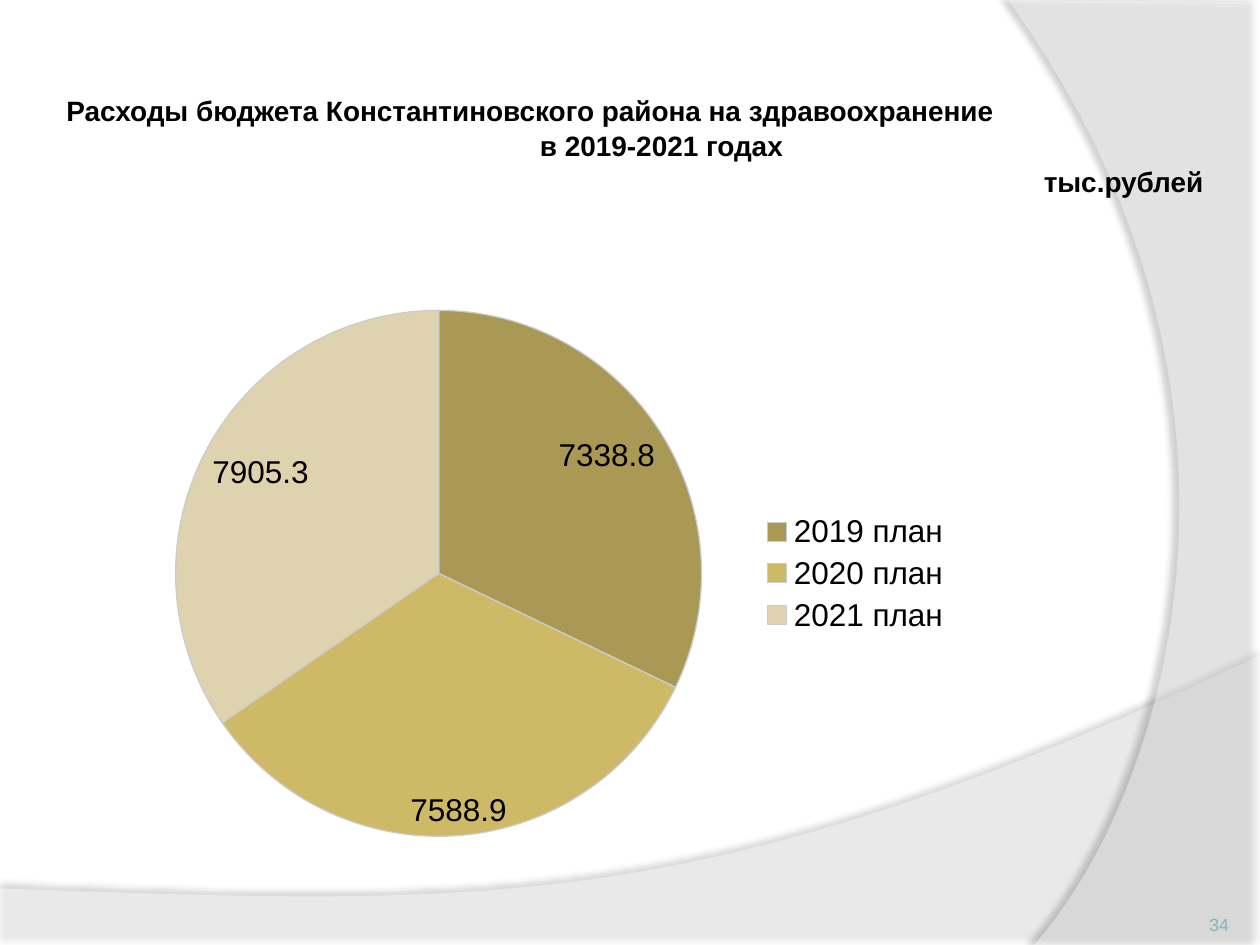
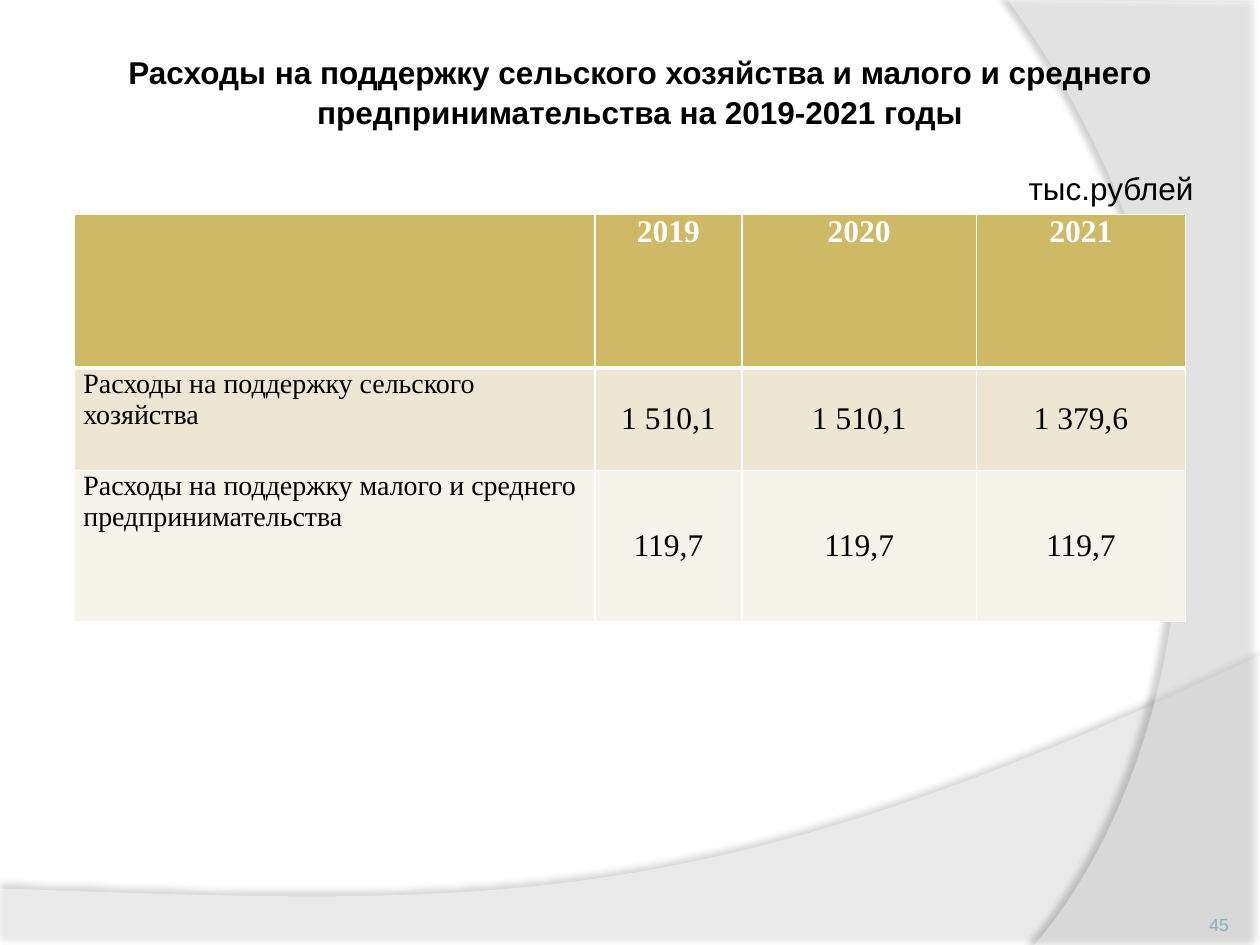
from pptx import Presentation
from pptx.chart.data import CategoryChartData
from pptx.dml.color import RGBColor
from pptx.enum.chart import XL_CHART_TYPE, XL_LABEL_POSITION, XL_LEGEND_POSITION
from pptx.enum.text import MSO_ANCHOR, PP_ALIGN
from pptx.oxml import parse_xml
from pptx.oxml.ns import nsdecls
from pptx.util import Cm, Pt

BLACK = RGBColor(0x00, 0x00, 0x00)
WHITE = RGBColor(0xFF, 0xFF, 0xFF)
GOLD = RGBColor(0xCE, 0xB9, 0x66)
DARK_GOLD = RGBColor(0xA9, 0x99, 0x55)
PALE_GOLD = RGBColor(0xDF, 0xD3, 0xAF)
SAND = RGBColor(0xED, 0xE6, 0xD3)
IVORY = RGBColor(0xF6, 0xF3, 0xEA)
SLICE_EDGE = RGBColor(0xCC, 0xCC, 0xCC)
TEAL = RGBColor(0x83, 0xB3, 0xBB)

SANS = "Arial"
SERIF = "Times New Roman"
CURVE_STEPS = 40


def curve_points(start, control_1, control_2, end):
    """Points along a cubic Bezier curve, including both ends."""
    points = []
    for step in range(CURVE_STEPS + 1):
        t = step / CURVE_STEPS
        weights = ((1 - t) ** 3, 3 * t * (1 - t) ** 2, 3 * t * t * (1 - t), t ** 3)
        corners = (start, control_1, control_2, end)
        points.append(tuple(
            sum(weight * corner[axis] for weight, corner in zip(weights, corners))
            for axis in (0, 1)))
    return points


class BudgetDeck:
    def __init__(self):
        self.deck = Presentation()
        self.deck.slide_width = Cm(25.4)
        self.deck.slide_height = Cm(19.05)
        self.page = None

    def add_page(self):
        self.page = self.deck.slides.add_slide(self.deck.slide_layouts[6])
        self.add_band(
            [(0, 19.08), (25.4, 19.08)],
            [(25.4, 13.21), (14.2, 18.52), (9.93, 18.26), (0, 17.91)],
            opacity=45, shadow_opacity=35, distance=3.5, direction=270)
        self.add_band(
            [(25.4, 0.05), (25.4, 19.05)],
            [(20.85, 19.05), (23.75, 15.72), (25.86, 7.62), (20.32, 0)],
            opacity=40, shadow_opacity=45, distance=4, direction=180)

    def add_band(self, corners, curve, opacity, shadow_opacity, distance, direction):
        """Translucent white area with one curved edge and a soft shadow."""
        outline = [(Cm(x), Cm(y)) for x, y in corners + curve_points(*curve)]
        builder = self.page.shapes.build_freeform(*outline[0])
        builder.add_line_segments(outline[1:], close=True)
        band = builder.convert_to_shape()
        band.fill.solid()
        band.fill.fore_color.rgb = WHITE
        band.line.fill.background()
        band.shadow.inherit = False
        properties = band.element.spPr
        properties.xpath("./a:solidFill/a:srgbClr")[0].append(parse_xml(
            f'<a:alpha {nsdecls("a")} val="{opacity * 1000}"/>'))
        properties.xpath("./a:effectLst")[0].append(parse_xml(
            f'<a:outerShdw {nsdecls("a")} blurRad="{Pt(4)}" dist="{Pt(distance)}" '
            f'dir="{direction * 60000}" algn="ctr" rotWithShape="0">'
            f'<a:srgbClr val="{BLACK}"><a:alpha val="{shadow_opacity * 1000}"/>'
            '</a:srgbClr></a:outerShdw>'))

    def style_font(self, font, size, color=BLACK, bold=False, name=SANS):
        font.name = name
        font.size = Pt(size)
        font.bold = bold
        font.color.rgb = color

    def add_text(self, left, top, width, height, lines, size, color=BLACK):
        """Each line is (text, alignment, bold)."""
        box = self.page.shapes.add_textbox(Cm(left), Cm(top), Cm(width), Cm(height))
        frame = box.text_frame
        frame.word_wrap = True
        frame.text = "\n".join(text for text, _, _ in lines)
        for paragraph, (_, alignment, bold) in zip(frame.paragraphs, lines):
            paragraph.alignment = alignment
            paragraph.line_spacing = 1.05
            for span in paragraph.runs:
                self.style_font(span.font, size, color, bold)
        return frame

    def add_page_number(self, number):
        frame = self.add_text(22.66, 17.83, 2.11, 1.02,
                              [(number, PP_ALIGN.RIGHT, False)], 10, TEAL)
        frame.vertical_anchor = MSO_ANCHOR.BOTTOM
        frame.margin_left = frame.margin_right = 0
        frame.margin_top = frame.margin_bottom = 0

    def add_pie(self, left, top, width, height, amounts, colors):
        data = CategoryChartData()
        data.categories = list(amounts)
        data.add_series("Series 1", list(amounts.values()))
        chart = self.page.shapes.add_chart(
            XL_CHART_TYPE.PIE, Cm(left), Cm(top), Cm(width), Cm(height), data).chart
        chart.has_title = False
        self.style_font(chart.font, 18)
        chart.has_legend = True
        chart.legend.position = XL_LEGEND_POSITION.RIGHT
        chart.legend.include_in_layout = False
        self.style_font(chart.legend.font, 18)

        plot = chart.plots[0]
        plot.vary_by_categories = True
        plot.has_data_labels = True
        labels = plot.data_labels
        labels.show_value = True
        labels.show_percentage = False
        labels.position = XL_LABEL_POSITION.INSIDE_END
        self.style_font(labels.font, 18)
        for index, color in enumerate(colors):
            slice_format = plot.series[0].points[index].format
            slice_format.fill.solid()
            slice_format.fill.fore_color.rgb = color
            slice_format.line.color.rgb = SLICE_EDGE
            slice_format.line.width = Pt(0.75)

        plot_area = chart.element.xpath(".//c:plotArea")[0]
        for old_layout in plot_area.xpath("./c:layout"):
            plot_area.remove(old_layout)
        plot_area.insert(0, parse_xml(
            f'<c:layout {nsdecls("c")}><c:manualLayout><c:layoutTarget val="inner"/>'
            '<c:xMode val="edge"/><c:yMode val="edge"/><c:x val="0.06"/><c:y val="0.03"/>'
            '<c:w val="0.63"/><c:h val="0.94"/></c:manualLayout></c:layout>'))

    def add_borders(self, cell, top, bottom):
        properties = cell._tc.get_or_add_tcPr()
        for side, width in (("L", 1), ("R", 1), ("T", top), ("B", bottom)):
            properties.append(parse_xml(
                f'<a:ln{side} {nsdecls("a")} w="{Pt(width)}"><a:solidFill>'
                f'<a:srgbClr val="{WHITE}"/></a:solidFill></a:ln{side}>'))

    def add_table(self, left, top, widths, heights, rows, fills):
        """The first row is the header and the first column holds row names."""
        table = self.page.shapes.add_table(
            len(rows), len(widths), Cm(left), Cm(top),
            Cm(sum(widths)), Cm(sum(heights))).table
        for column, width in zip(table.columns, widths):
            column.width = Cm(width)
        for row_index, (row, height) in enumerate(zip(rows, heights)):
            table.rows[row_index].height = Cm(height)
            is_header = row_index == 0
            for column_index, text in enumerate(row):
                is_name = column_index == 0
                cell = table.cell(row_index, column_index)
                self.add_borders(cell, top=3 if row_index == 1 else 1,
                                 bottom=3 if is_header else 1)
                cell.fill.solid()
                cell.fill.fore_color.rgb = fills[row_index]
                cell.margin_left = cell.margin_right = Cm(0.18)
                cell.margin_top = cell.margin_bottom = 0
                if not (is_header or is_name):
                    cell.vertical_anchor = MSO_ANCHOR.MIDDLE
                cell.text_frame.text = text
                paragraph = cell.text_frame.paragraphs[0]
                paragraph.alignment = PP_ALIGN.LEFT if is_name else PP_ALIGN.CENTER
                for span in paragraph.runs:
                    self.style_font(span.font, 16 if is_name else 18,
                                    WHITE if is_header else BLACK, is_header, SERIF)


def add_health_page(budget):
    budget.add_page()
    title = budget.add_text(1.09, 1.73, 23.42, 2.31, [
        ("Расходы бюджета Константиновского района на здравоохранение",
         PP_ALIGN.LEFT, True),
        ("в 2019-2021 годах", PP_ALIGN.CENTER, True),
        ("тыс.рублей", PP_ALIGN.RIGHT, True)], 16)
    title.paragraphs[1]._p.get_or_add_pPr().set("marL", str(Cm(1.07)))
    budget.add_pie(2.49, 5.92, 16.94, 11.28,
                   {"2019 план": 7338.8, "2020 план": 7588.9, "2021 план": 7905.3},
                   (DARK_GOLD, GOLD, PALE_GOLD))
    budget.add_page_number("34")


def add_support_page(budget):
    budget.add_page()
    budget.add_table(
        1.5, 4.32, (10.49, 2.97, 4.72, 4.22), (3.1, 2.06, 3.05),
        (("", "2019", "2020", "2021"),
         ("Расходы на поддержку сельского хозяйства", "1 510,1", "1 510,1", "1 379,6"),
         ("Расходы на поддержку малого и среднего предпринимательства",
          "119,7", "119,7", "119,7")),
        (GOLD, SAND, IVORY))
    title = budget.add_text(1.5, 0.91, 22.81, 3.33, [
        ("Расходы на поддержку сельского хозяйства и малого и среднего "
         "предпринимательства на 2019-2021 годы", PP_ALIGN.CENTER, True),
        ("тыс.рублей", PP_ALIGN.RIGHT, False)], 18)
    title.paragraphs[1].space_before = Pt(21)
    budget.add_page_number("45")


def main():
    budget = BudgetDeck()
    add_health_page(budget)
    add_support_page(budget)
    budget.deck.save("out.pptx")


if __name__ == "__main__":
    main()
